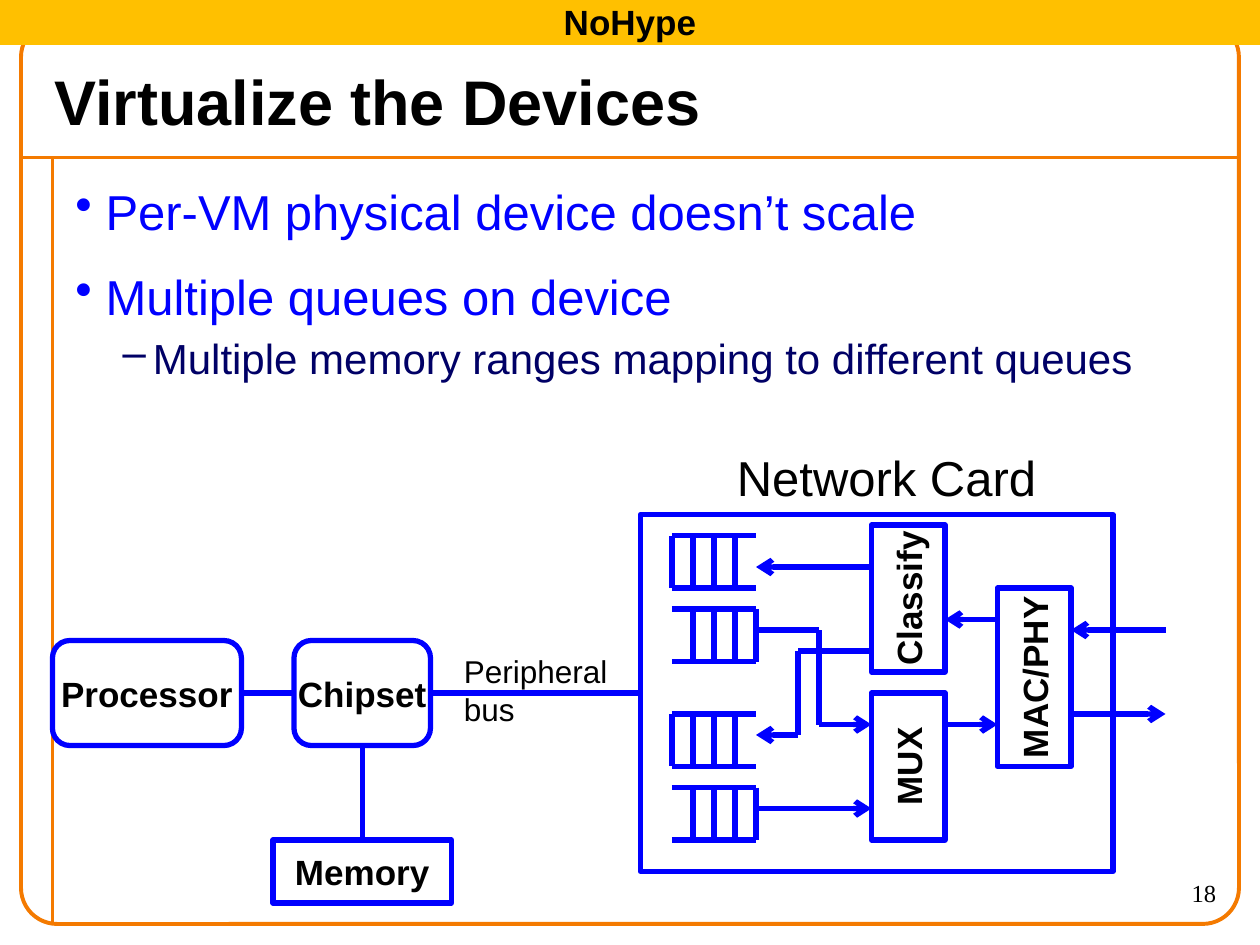
from pptx import Presentation
from pptx import util as u
from pptx.dml.color import RGBColor
from pptx.enum import shapes, text
from pptx.oxml.ns import qn
from lxml import etree

PX = 9525
BLACK = RGBColor(0, 0, 0)
BLUE = RGBColor(0, 0, 255)
NAVY = RGBColor(0, 0, 0x66)
ORANGE = RGBColor(0xF4, 0x7A, 0)
AMBER = RGBColor(0xFF, 0xC0, 0)
RECT = shapes.MSO_SHAPE.RECTANGLE
ROUND = shapes.MSO_SHAPE.ROUNDED_RECTANGLE
CENTER, RIGHT = text.PP_ALIGN.CENTER, text.PP_ALIGN.RIGHT
MIDDLE = text.MSO_ANCHOR.MIDDLE
TOP_SIDE, LEFT_SIDE, BOTTOM_SIDE, RIGHT_SIDE = range(4)


def px(*values):
    return [u.Emu(v * PX) for v in values]


def write(p, content, size=20, color=BLACK, bold=False, font="Arial",
          align=None, before=0, bullet=None, margin=0, hang=23):
    r = p.add_run()
    r.text = content
    r.font.size = u.Pt(size)
    r.font.name = font
    r.font.bold = bold
    r.font.color.rgb = color
    p.alignment = align
    p.space_before = u.Pt(before)
    if bullet:
        ppr = p._p.get_or_add_pPr()
        ppr.set("marL", str(margin * PX))
        ppr.set("indent", str(-hang * PX))
        etree.SubElement(ppr, qn("a:buChar")).set("char", bullet)


def add_text(s, box, items, anchor=None, wrap=True, inset=5, **fmt):
    tf = s.shapes.add_textbox(*px(*box)).text_frame
    tf.word_wrap = wrap
    tf.vertical_anchor = anchor
    tf.margin_top = u.Emu(inset * PX)
    for i, (content, extra) in enumerate(items):
        p = tf.add_paragraph() if i else tf.paragraphs[0]
        write(p, content, **{**fmt, **extra})


def add_box(s, box, label="", kind=RECT, fill=None, line=BLUE, width=3, vertical=False):
    sp = s.shapes.add_shape(kind, *px(*box))
    sp.shadow.inherit = False
    if fill is None:
        sp.fill.background()
    else:
        sp.fill.solid()
        sp.fill.fore_color.rgb = fill
    sp.line.color.rgb = line
    sp.line.width = u.Pt(width)
    if label:
        tf = sp.text_frame
        tf.word_wrap = False
        tf.vertical_anchor = MIDDLE
        if vertical:
            tf._txBody.bodyPr.set("vert", "vert270")
        write(tf.paragraphs[0], label, bold=True, align=CENTER)
    return sp


def add_line(s, x1, y1, x2, y2, color=BLUE, width=3, arrow=False):
    c = s.shapes.add_connector(shapes.MSO_CONNECTOR.STRAIGHT, *px(x1, y1, x2, y2))
    c.line.color.rgb = color
    c.line.width = u.Pt(width)
    if arrow:
        etree.SubElement(c.line._get_or_add_ln(), qn("a:tailEnd")).set("type", "arrow")
    etree.SubElement(c._element.spPr, qn("a:effectLst"))
    return c


def add_wire(s, *points):
    last = len(points) - 2
    for i, (start, end) in enumerate(zip(points, points[1:])):
        add_line(s, *start, *end, arrow=i == last)


def join(s, a, a_side, b, b_side):
    c = add_line(s, 0, 0, 0, 0)
    c.begin_connect(a, a_side)
    c.end_connect(b, b_side)


def add_queue(s, top, open_left):
    left, right, slot, height = 512, 576, 16, 40
    first = left + slot if open_left else left
    for x in range(first, first + 4 * slot, slot):
        add_line(s, x, top, x, top + height)
    for y in (top, top + height):
        add_line(s, left, y, right, y)


def add_frame(s):
    add_line(s, 16, 120, 944, 120, ORANGE, 2.25)
    add_line(s, 40, 120, 40, 704, ORANGE, 2.25)
    frame = add_box(s, (16, 16, 928, 688), kind=ROUND, line=ORANGE, width=2.25)
    frame.adjustments[0] = 0.04


def add_computer(s, card):
    processor = add_box(s, (40, 488, 144, 80), "Processor", ROUND)
    chipset = add_box(s, (224, 488, 104, 80), "Chipset", ROUND)
    memory = add_box(s, (208, 640, 136, 48), "Memory")
    join(s, processor, RIGHT_SIDE, chipset, LEFT_SIDE)
    join(s, chipset, RIGHT_SIDE, card, LEFT_SIDE)
    join(s, chipset, BOTTOM_SIDE, memory, TOP_SIDE)


def add_card_parts(s):
    for top in (408, 544):
        add_queue(s, top, open_left=False)
        add_queue(s, top + 56, open_left=True)
    add_box(s, (664, 400, 56, 112), "Classify", vertical=True)
    add_box(s, (664, 528, 56, 112), "MUX", vertical=True)
    add_box(s, (760, 448, 56, 136), "MAC/PHY", vertical=True)
    add_wire(s, (664, 432), (576, 432))
    add_wire(s, (664, 496), (608, 496), (608, 560), (576, 560))
    add_wire(s, (576, 480), (624, 480), (624, 552), (664, 552))
    add_wire(s, (576, 616), (664, 616))
    add_wire(s, (760, 472), (720, 472))
    add_wire(s, (720, 552), (760, 552))
    add_wire(s, (888, 480), (816, 480))
    add_wire(s, (816, 544), (888, 544))


def main():
    prs = Presentation()
    prs.slide_width, prs.slide_height = px(960, 720)
    s = prs.slides.add_slide(prs.slide_layouts[6])
    add_frame(s)
    add_text(s, (32, 40, 847, 72), [("Virtualize the Devices", {})],
             anchor=MIDDLE, size=36, bold=True)
    add_text(s, (48, 128, 888, 576), [
        ("Per-VM physical device doesn’t scale", {}),
        ("Multiple queues on device", {"before": 15}),
        ("Multiple memory ranges mapping to different queues",
         {"size": 24, "color": NAVY, "before": 4, "bullet": "–", "margin": 59}),
    ], inset=10, size=28, color=BLUE, bullet="•", margin=23)
    add_text(s, (840, 664, 96, 40), [("18", {})],
             size=14, font="Times New Roman", align=RIGHT)
    card = add_box(s, (488, 392, 360, 272))
    add_computer(s, card)
    add_card_parts(s)
    add_text(s, (552, 336, 251, 55), [("Network Card", {})], wrap=False, size=28)
    add_text(s, (344, 492, 130, 68), [("Peripheral", {}), ("bus", {})],
             wrap=False, size=18)
    add_box(s, (0, 0, 960, 32), "NoHype", fill=AMBER, line=AMBER)
    prs.save("out.pptx")


if __name__ == "__main__":
    main()
